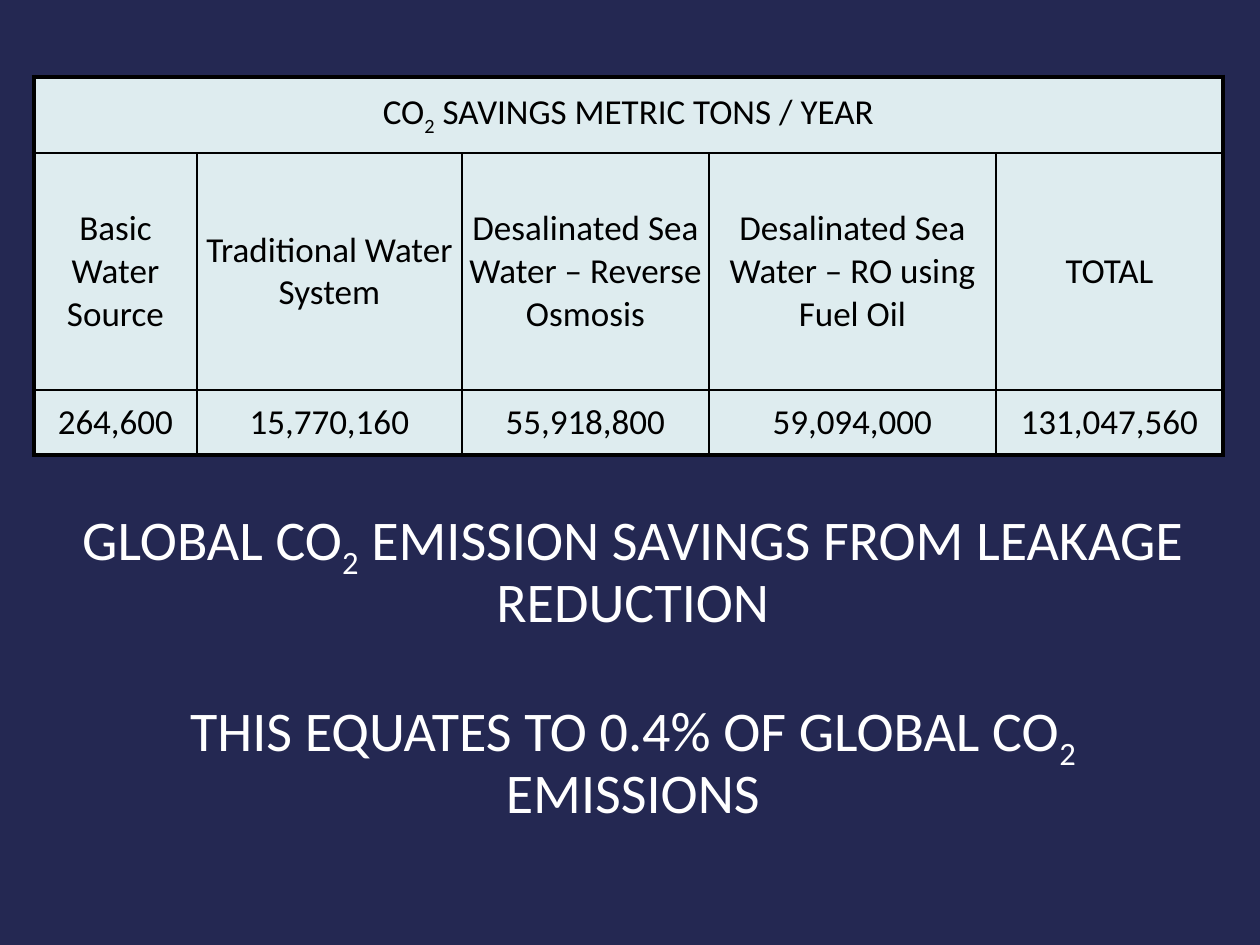
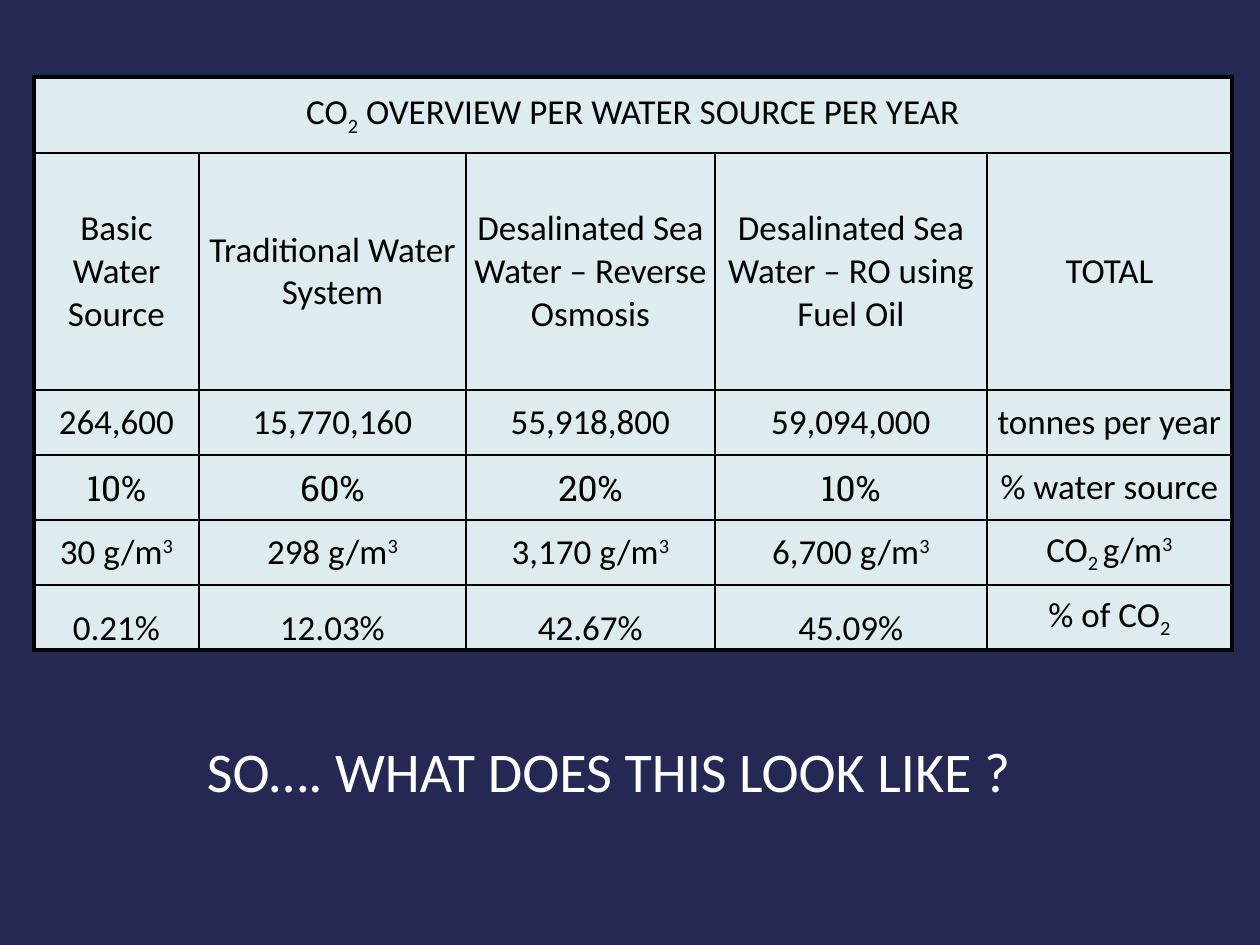
from lxml.etree import SubElement
from pptx import Presentation
from pptx.dml.color import RGBColor
from pptx.enum.text import MSO_ANCHOR as Anchor, MSO_AUTO_SIZE as AutoSize, PP_ALIGN as Align
from pptx.oxml.ns import qn
from pptx.util import Pt

EMU_PER_PX = 914400 / 126
NAVY, PALE, BLACK, WHITE = "242852", "DEECEF", "000000", "FFFFFF"
BODY_FONT, SLAB_FONT = "Calibri", "Roboto Slab"
BASELINES = {"_": "-25000", "^": "30000"}
TABLE_LEFT, TABLE_TOP = 34, 77
CAPTION_HEIGHT, HEADER_HEIGHT, ROW_HEIGHT = 76, 237, 65
OUTER_LINE, INNER_LINE = 3, 1

HEADERS = ["Basic Water Source", "Traditional Water System",
           "Desalinated Sea Water – Reverse Osmosis",
           "Desalinated Sea Water – RO using Fuel Oil", "TOTAL"]
TONNES = ["264,600", "15,770,160", "55,918,800", "59,094,000"]
SHARES = ["10%", "60%", "20%", "10%"]
GRAMS = [f"{amount} g/m|^3" for amount in ("30", "298", "3,170", "6,700")]
CO2_SHARES = ["0.21%", "12.03%", "42.67%", "45.09%"]


def px(length):
    """Turn pixels into EMU."""
    return round(length * EMU_PER_PX)


def color(code):
    """Turn a hex string into a colour."""
    return RGBColor.from_string(code)


def write(para, text, size, ink, font=BODY_FONT):
    """Write centred text whose |-parts starting with _ or ^ are sub- or superscript."""
    para.alignment = Align.CENTER
    para.font.size = Pt(size)
    para.font.name = font
    para.font.color.rgb = color(ink)
    for part in text.split("|"):
        span = para.add_run()
        span.text = part.lstrip("_^")
        if part[0] in BASELINES:
            span.font._element.set("baseline", BASELINES[part[0]])


def add_page(deck):
    """Add a title-only slide on the navy background."""
    page = deck.slides.add_slide(deck.slide_layouts[5])
    page.background.fill.solid()
    page.background.fill.fore_color.rgb = color(NAVY)
    return page


def place_title(page, bounds, lines):
    """Place the title and write one paragraph per line, a line's height apart."""
    title = page.shapes.title
    title.left, title.top, title.width, title.height = map(px, bounds)
    frame = title.text_frame
    frame.word_wrap = True
    frame.auto_size = AutoSize.NONE
    frame.vertical_anchor = Anchor.BOTTOM
    for index, line in enumerate(lines):
        para = frame.add_paragraph() if index else frame.paragraphs[0]
        para.line_spacing = 0.9
        para.space_before = Pt(35 if index else 0)
        write(para, line, 32, WHITE)


def set_borders(cell, outer_sides):
    """Draw black cell borders, thick on the outer sides."""
    properties = cell._tc.get_or_add_tcPr()
    for side in "LRTB":
        width = OUTER_LINE if side in outer_sides else INNER_LINE
        line = SubElement(properties, qn(f"a:ln{side}"), w=str(Pt(width)))
        fill = SubElement(line, qn("a:solidFill"))
        SubElement(fill, qn("a:srgbClr"), val=BLACK)


def fill_cell(cell, text, outer_sides, font=BODY_FONT, anchor=Anchor.MIDDLE):
    """Format one table cell and write its text."""
    set_borders(cell, outer_sides)
    cell.fill.solid()
    cell.fill.fore_color.rgb = color(PALE)
    cell.margin_left = cell.margin_right = cell.margin_top = cell.margin_bottom = 0
    cell.vertical_anchor = anchor
    if text:
        write(cell.text_frame.paragraphs[0], text, 20, BLACK, font)


def add_source_table(page, caption, widths, records, styles=None):
    """Add the water source table: caption, headers and records, with styles by record."""
    rows = [[caption] + [""] * (len(widths) - 1), HEADERS, *records]
    heights = [CAPTION_HEIGHT, HEADER_HEIGHT] + [ROW_HEIGHT] * len(records)
    table = page.shapes.add_table(len(rows), len(widths), px(TABLE_LEFT), px(TABLE_TOP),
                                  px(sum(widths)), px(sum(heights))).table
    table.first_row = table.horz_banding = False
    for column, width in zip(table.columns, widths):
        column.width = px(width)
    for row, height in zip(table.rows, heights):
        row.height = px(height)
    last_row, last_column = len(rows) - 1, len(widths) - 1
    table.cell(0, 0).merge(table.cell(0, last_column))
    for r, texts in enumerate(rows):
        for c, text in enumerate(texts):
            sides = "T" if r == 0 else "B" if r == last_row else ""
            sides += "L" if c == 0 or r == 0 else ""
            sides += "R" if c == last_column or r == 0 else ""
            style = (styles or {}).get(r - 2, {}) if c < last_column else {}
            fill_cell(table.cell(r, c), text, sides, **style)


def build_savings(deck):
    """Build the slide on yearly savings."""
    page = add_page(deck)
    place_title(page, (68, 522, 1130, 310), [
        "GLOBAL CO|_2| EMISSION SAVINGS FROM LEAKAGE REDUCTION",
        "THIS EQUATES TO 0.4% OF GLOBAL CO|_2 |EMISSIONS"])
    add_source_table(page, "CO|_2| SAVINGS METRIC TONS / YEAR",
                     [163, 265, 247, 287, 227], [TONNES + ["131,047,560"]])


def build_overview(deck):
    """Build the slide comparing the water sources."""
    page = add_page(deck)
    place_title(page, (44, 679, 1130, 132), ["SO…. WHAT DOES THIS LOOK LIKE ?"])
    records = [TONNES + ["tonnes per year"], SHARES + ["% water source"],
               GRAMS + ["CO|_2 |g/m|^3"], CO2_SHARES + ["% of CO|_2"]]
    add_source_table(page, "CO|_2| OVERVIEW PER WATER SOURCE PER YEAR",
                     [165, 267, 249, 272, 245], records,
                     {1: {"font": SLAB_FONT}, 3: {"anchor": Anchor.BOTTOM}})


def main():
    """Build and save the deck."""
    deck = Presentation()
    deck.slide_width, deck.slide_height = px(1260), px(945)
    build_savings(deck)
    build_overview(deck)
    deck.save("out.pptx")


if __name__ == "__main__":
    main()
